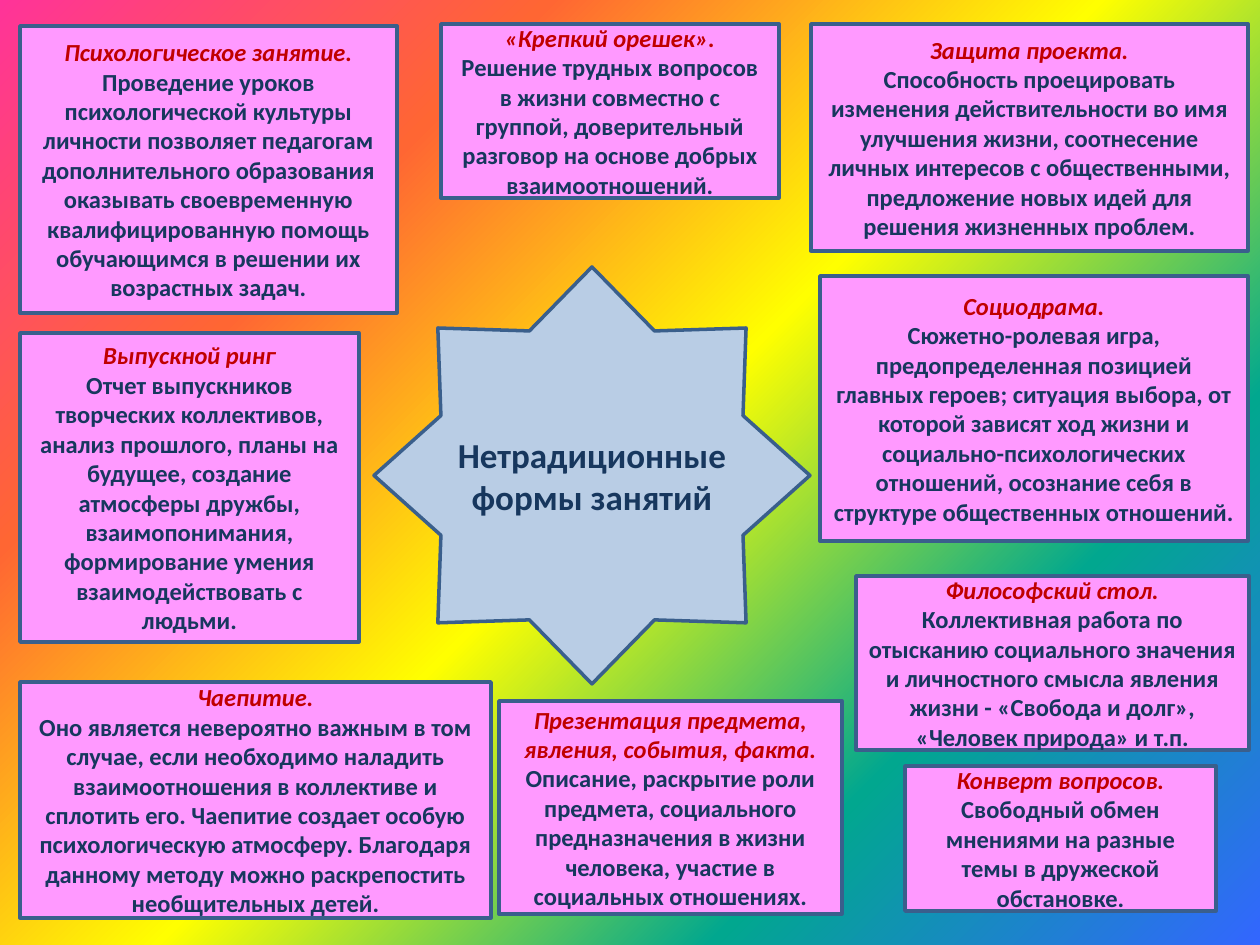
import copy

import pptx
import pptx.dml.color
import pptx.enum.shapes
import pptx.enum.text
import pptx.util

EMU_PER_PX = 914400 / 126
SHAPES = pptx.enum.shapes.MSO_SHAPE
NAVY, RED, PINK, PALE_BLUE, OUTLINE = "17375E", "C00000", "FF99FF", "B9CDE5", "3A5F8C"
RAINBOW = ["FF3399", "FF6633", "FFFF00", "01A78F", "3366FF"]

# Box as left, top, width, height in px; then heading and description.
CARDS = [
    ((499, 701, 343, 213), "Презентация предмета, явления, события, факта.",
     "Описание, раскрытие роли предмета, социального предназначения в жизни "
     "человека, участие в социальных отношениях."),
    ((820, 276, 428, 265), "Социодрама.",
     "Сюжетно-ролевая игра, предопределенная позицией главных героев; ситуация "
     "выбора, от которой зависят ход жизни и социально-психологических отношений, "
     "осознание себя в структуре общественных отношений."),
    ((20, 26, 377, 287), "Психологическое занятие.",
     "Проведение уроков психологической культуры личности позволяет педагогам "
     "дополнительного образования оказывать своевременную квалифицированную "
     "помощь обучающимся в решении их возрастных задач."),
    ((20, 333, 339, 309), "Выпускной ринг",
     "Отчет выпускников творческих коллективов, анализ прошлого, планы на будущее, "
     "создание атмосферы дружбы, взаимопонимания, формирование умения "
     "взаимодействовать с людьми."),
    ((905, 766, 311, 145), "Конверт вопросов.",
     "Свободный обмен мнениями на разные темы в дружеской обстановке."),
    ((811, 24, 437, 227), "Защита проекта.",
     "Способность проецировать изменения действительности во имя улучшения жизни, "
     "соотнесение личных интересов с общественными, предложение новых идей для "
     "решения жизненных проблем."),
    ((856, 576, 393, 174), "Философский стол.",
     "Коллективная работа по отысканию социального значения и личностного смысла "
     "явления жизни - «Свобода и долг», «Человек природа» и т.п."),
    ((20, 682, 471, 236), "Чаепитие.",
     "Оно является невероятно важным в том случае, если необходимо наладить "
     "взаимоотношения в коллективе и сплотить его. Чаепитие создает особую "
     "психологическую атмосферу. Благодаря данному методу можно раскрепостить "
     "необщительных детей."),
    ((441, 24, 338, 174), "«Крепкий орешек».",
     "Решение трудных вопросов в жизни совместно с группой, доверительный разговор "
     "на основе добрых взаимоотношений."),
]


def px(length):
    return pptx.util.Emu(round(length * EMU_PER_PX))


def color(hex_string):
    return pptx.dml.color.RGBColor.from_string(hex_string)


def paint_background(slide):
    """Fill the slide with an evenly spaced rainbow from top left to bottom right."""
    fill = slide.background.fill
    fill.gradient()
    fill.gradient_angle = 315  # counter-clockwise
    first_stop = slide.element.find(".//" + pptx.oxml.ns.qn("a:gs"))
    for _ in RAINBOW[2:]:
        first_stop.addnext(copy.deepcopy(first_stop))
    for index, (stop, hex_string) in enumerate(zip(fill.gradient_stops, RAINBOW)):
        stop.color.rgb = color(hex_string)
        stop.position = index / (len(RAINBOW) - 1)


def add_panel(slide, kind, box, fill, text):
    """Add an outlined shape with centred text and return its paragraphs."""
    shape = slide.shapes.add_shape(kind, *map(px, box))
    shape.shadow.inherit = False
    shape.fill.solid()
    shape.fill.fore_color.rgb = color(fill)
    shape.line.color.rgb = color(OUTLINE)
    shape.line.width = pptx.util.Pt(2)
    text_frame = shape.text_frame
    text_frame.word_wrap = True
    text_frame.vertical_anchor = pptx.enum.text.MSO_ANCHOR.MIDDLE
    text_frame.text = text
    return text_frame.paragraphs


def format_paragraph(paragraph, size, hex_string, italic=False):
    paragraph.alignment = pptx.enum.text.PP_ALIGN.CENTER
    for run in paragraph.runs:
        run.font.name = "Calibri"
        run.font.size = pptx.util.Pt(size)
        run.font.bold = True
        run.font.italic = italic
        run.font.color.rgb = color(hex_string)


def add_star(slide, box, title):
    paragraphs = add_panel(slide, SHAPES.STAR_8_POINT, box, PALE_BLUE, title)
    format_paragraph(paragraphs[0], 20, NAVY)


def add_card(slide, box, heading, description):
    text = f"{heading}\n{description}"
    first, second = add_panel(slide, SHAPES.RECTANGLE, box, PINK, text)
    format_paragraph(first, 14, RED, italic=True)
    format_paragraph(second, 14, NAVY)


def main():
    presentation = pptx.Presentation()
    presentation.slide_width, presentation.slide_height = px(1260), px(945)
    slide = presentation.slides.add_slide(presentation.slide_layouts[6])
    paint_background(slide)
    add_star(slide, (374, 267, 436, 417), "Нетрадиционные формы занятий")
    for card in CARDS:
        add_card(slide, *card)
    presentation.save("out.pptx")


if __name__ == "__main__":
    main()
